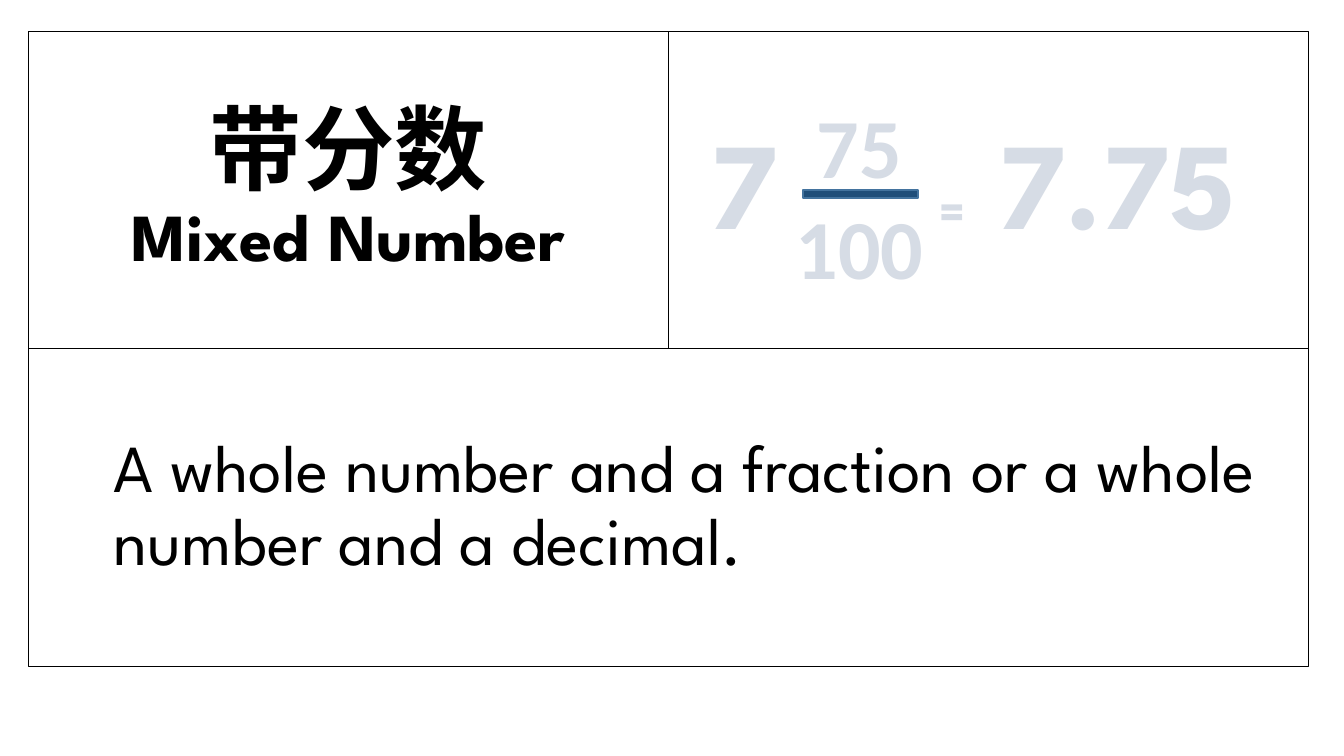
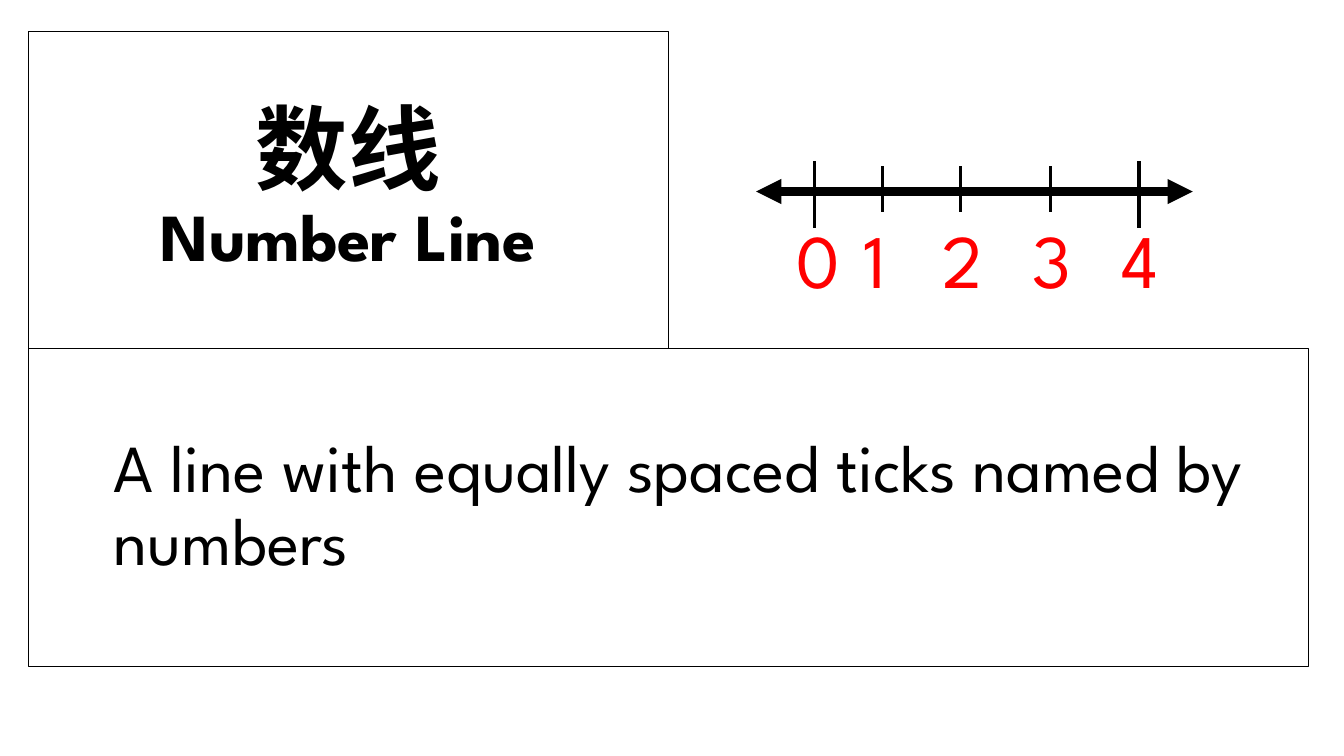
import pptx
import pptx.util
import pptx.dml.color
import pptx.enum.shapes
import pptx.enum.text
import pptx.oxml.ns

Inches = pptx.util.Inches
Pt = pptx.util.Pt
qn = pptx.oxml.ns.qn
ALIGN = pptx.enum.text.PP_ALIGN
MIDDLE = pptx.enum.text.MSO_ANCHOR.MIDDLE
SPARTAN = "League Spartan"
BLACK, PALE, RED = "000000", "D6DCE5", "FF0000"


def paint(target, hue):
    """Give a solid colour to a fill."""
    target.solid()
    target.fore_color.rgb = pptx.dml.color.RGBColor.from_string(hue)


def style(run, size, face, hue, bold=False):
    run.font.size = Pt(size)
    run.font.name = face
    run.font.bold = bold
    paint(run.font.fill, hue)


deck = pptx.Presentation()
deck.slide_width, deck.slide_height = Inches(13.33), Inches(7.5)

# Card grid: term and example above, meaning below
left, top, half, high = 0.28, 0.31, 6.35, 3.15
cells = [(left, top, half), (left, top + high, 2 * half), (left + half, top, half)]

cards = [
    (3, "带分数\vMixed Number",
     "A whole number and a fraction or a whole number and a decimal."),
    (1, "数线\vNumber Line",
     "A line with equally spaced ticks named by numbers"),
]

for layout, term, text in cards:
    slide = deck.slides.add_slide(deck.slide_layouts[layout])

    # Framed cells
    for holder, (x, y, wide) in zip(slide.placeholders, cells):
        holder.left, holder.top = Inches(x), Inches(y)
        holder.width, holder.height = Inches(wide), Inches(high)
        paint(holder.line.fill, BLACK)
        holder.line.width = Pt(0.75)
        frame = holder.text_frame
        frame.word_wrap = True
        frame.auto_size = pptx.enum.text.MSO_AUTO_SIZE.NONE
        frame.vertical_anchor = MIDDLE
        para = frame.paragraphs[0]
        props = para._p.get_or_add_pPr()
        props.set("marL", "0")
        props.set("indent", "0")
        props.append(props.makeelement(qn("a:buNone"), {}))
        para.line_spacing = 0.9
        para.space_before = Pt(0)

    # Term in two languages
    para = slide.shapes.title.text_frame.paragraphs[0]
    para.text = term
    para.alignment = ALIGN.CENTER
    style(para.runs[0], 66, "Roboto", BLACK, True)
    style(para.runs[1], 48, SPARTAN, BLACK, True)

    # Meaning
    para = slide.placeholders[1].text_frame.paragraphs[0]
    para.text = text
    para.alignment = ALIGN.LEFT
    para._p.pPr.set("marL", str(Inches(0.75)))
    style(para.runs[0], 48, SPARTAN, BLACK)

mixed, number = deck.slides

# Whole part, at the left of the example cell
whole = mixed.shapes.add_textbox(Inches(left + half), Inches(top), Inches(1.5), Inches(high))
whole.text_frame.word_wrap = True
whole.text_frame.vertical_anchor = MIDDLE
whole.text_frame.margin_left = Inches(0.42)
para = whole.text_frame.paragraphs[0]
para.text = "7"
para.line_spacing = 0.9
style(para.runs[0], 88, SPARTAN, PALE, True)

# Decimal, to the right of the fraction
frame = mixed.placeholders[2].text_frame
frame.margin_left = Inches(2.69)
for text, size in [("=", 36), (" 7.75", 88)]:
    run = frame.paragraphs[0].add_run()
    run.text = text
    style(run, size, SPARTAN, PALE, True)

# Fraction
group = mixed.shapes.add_group_shape()
box = group.shapes.add_textbox(Inches(7.5), Inches(0.89), Inches(2.05), Inches(2.42))
box.text_frame.word_wrap = True
box.text_frame.text = "75\n100"
for para in box.text_frame.paragraphs:
    para.alignment = ALIGN.CENTER
    style(para.runs[0], 60, "Calibri", PALE, True)
bar = group.shapes.add_shape(pptx.enum.shapes.MSO_SHAPE.MATH_MINUS,
                             Inches(7.76), Inches(1.75), Inches(1.55), Inches(0.35))
bar.shadow.inherit = False
paint(bar.fill, "1F4E79")
paint(bar.line.fill, "43739E")
bar.line.width = Pt(1)

# Number line: axis first, then ticks
ticks = [8.08, 8.75, 9.53, 10.42, 11.3]
strokes = [(7.5, 1.9, 11.83, 1.9, 6)]
for x in ticks:
    ends = x in (ticks[0], ticks[-1])
    y, base = (1.6, 2.26) if ends else (1.65, 2.1)
    strokes.append((x, y, x, base, 3 if x == ticks[-1] else 2.25))

for x, y, right, base, weight in strokes:
    line = number.shapes.add_connector(pptx.enum.shapes.MSO_CONNECTOR.STRAIGHT,
                                       Inches(x), Inches(y), Inches(right), Inches(base))
    paint(line.line.fill, BLACK)
    line.line.width = Pt(weight)
    shape = line._element.spPr
    shape.append(shape.makeelement(qn("a:effectLst"), {}))
    if y == base:
        stroke = shape.find(qn("a:ln"))
        for end in ("a:headEnd", "a:tailEnd"):
            stroke.append(stroke.makeelement(qn(end), {"type": "triangle"}))

# Tick labels
for count, x in enumerate(ticks):
    box = number.shapes.add_textbox(Inches(x - 0.28), Inches(2.06), Inches(0.72), Inches(1.01))
    box.text_frame.word_wrap = True
    box.text_frame.text = str(count)
    style(box.text_frame.paragraphs[0].runs[0], 54, SPARTAN, RED)

deck.save("out.pptx")
